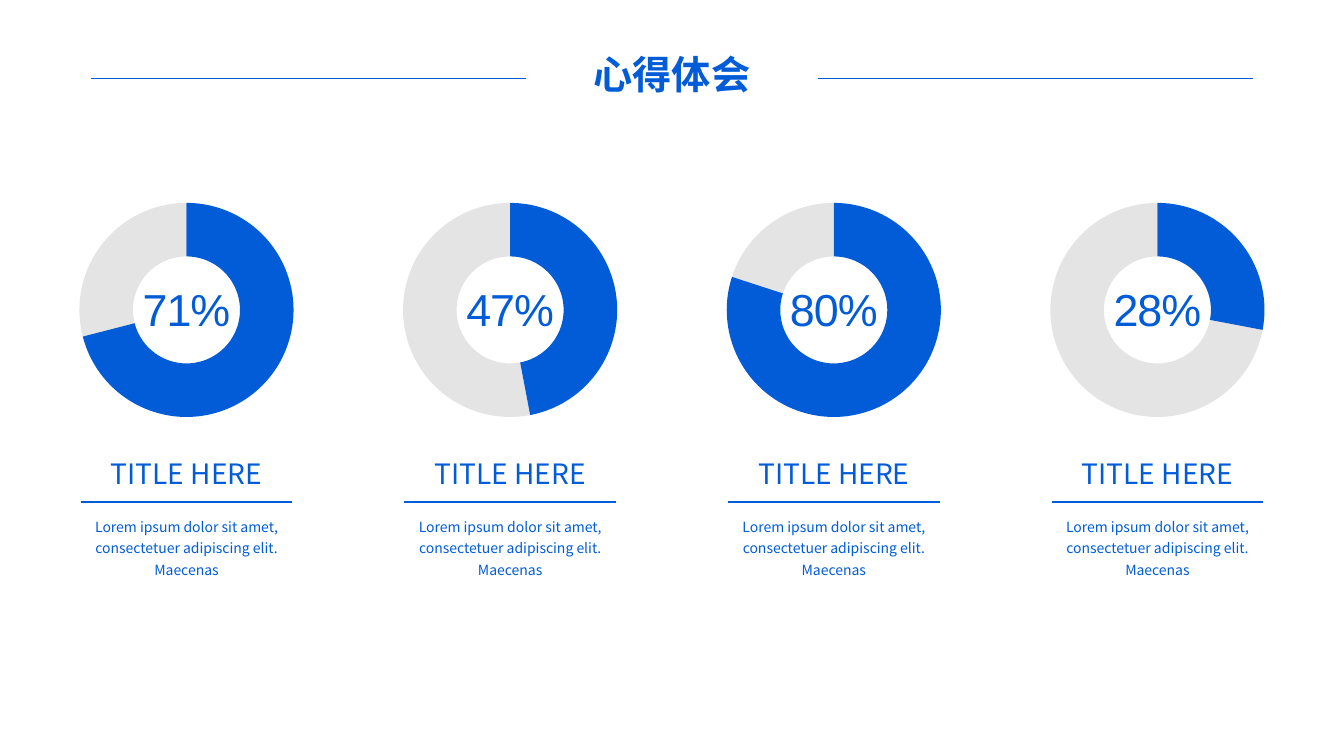
import pptx
import pptx.chart.data
import pptx.dml.color
import pptx.enum.chart
import pptx.enum.shapes
import pptx.enum.text
import pptx.oxml.ns
import pptx.util
from lxml import etree

COLORS = {"blue": "025CD7", "grey": "A6A6A6"}
HEADING_FONT = "Noto Sans CJK SC"
NUMBER_FONT = "Arial"
WIDTH, HEIGHT = 13.33, 7.5
FIRST_CENTER, COLUMN_STEP = 1.85, 3.21
PERCENTAGES = [71, 47, 80, 28]
CAPTION = "Lorem ipsum dolor sit amet, consectetuer adipiscing elit. Maecenas"

inches = pptx.util.Inches
qn = pptx.oxml.ns.qn


def rgb(name):
    return pptx.dml.color.RGBColor.from_string(COLORS[name])


def add_text(page, text, center, top, width, height, size, font=HEADING_FONT,
             bold=False, line_spacing=None, letter_spacing=None, wrap=True, middle=False):
    """Add centred blue text in a box placed by its horizontal centre."""
    box = page.shapes.add_textbox(inches(center - width / 2), inches(top),
                                  inches(width), inches(height))
    frame = box.text_frame
    frame.word_wrap = wrap
    frame.auto_size = pptx.enum.text.MSO_AUTO_SIZE.SHAPE_TO_FIT_TEXT
    if middle:
        frame.vertical_anchor = pptx.enum.text.MSO_ANCHOR.MIDDLE
    para = frame.paragraphs[0]
    para.alignment = pptx.enum.text.PP_ALIGN.CENTER
    if line_spacing:
        para.line_spacing = line_spacing
    span = para.add_run()
    span.text = text
    span.font.size = pptx.util.Pt(size)
    span.font.name = font
    span.font.bold = bold
    span.font.color.rgb = rgb("blue")
    properties = span.font._element
    etree.SubElement(properties, qn("a:ea"), typeface=font)
    if letter_spacing is not None:
        properties.set("spc", str(round(letter_spacing * 100)))


def add_rule(page, left, right, y, weight):
    rule = page.shapes.add_connector(pptx.enum.shapes.MSO_CONNECTOR.STRAIGHT,
                                     inches(left), inches(y), inches(right), inches(y))
    rule.line.color.rgb = rgb("blue")
    rule.line.width = pptx.util.Pt(weight)
    etree.SubElement(rule._element.spPr, qn("a:effectLst"))


def add_doughnut(page, percentage, center):
    data = pptx.chart.data.CategoryChartData()
    data.categories = ["1", "2"]
    data.add_series("Series 1", [percentage, 100 - percentage])
    width, height = 3.56, 2.4
    chart = page.shapes.add_chart(
        pptx.enum.chart.XL_CHART_TYPE.DOUGHNUT, inches(center - width / 2),
        inches(HEIGHT / 4), inches(width), inches(height), data).chart
    chart.has_legend = False
    chart.has_title = False
    chart.font.name = NUMBER_FONT
    chart.font.size = pptx.util.Pt(18)
    plot = chart.plots[0]
    plot.vary_by_categories = True
    plot._element.find(qn("c:holeSize")).set("val", "80")
    for index, color in enumerate(("blue", "grey")):
        piece = plot.series[0].points[index].format
        piece.fill.solid()
        piece.fill.fore_color.rgb = rgb(color)
        piece.line.fill.background()
    # The remainder is a 30 % tint of grey
    remainder = plot.series[0].points[1].format.fill
    grey = remainder._xPr.find(qn("a:solidFill")).find(qn("a:srgbClr"))
    etree.SubElement(grey, qn("a:alpha"), val="30000")


def add_header(page):
    middle, inner, outer = WIDTH / 2, 1.45, 5.76
    add_rule(page, middle - outer, middle - inner, 0.78, 0.5)
    add_rule(page, middle + inner, middle + outer, 0.78, 0.5)
    add_text(page, "心得体会", middle, 0.45, 2.86, 0.57, 28, bold=True)


def add_column(page, percentage, center):
    add_doughnut(page, percentage, center)
    add_text(page, "TITLE HERE", center, 4.48, 2.3, 0.44, 20)
    add_text(page, CAPTION, center, 5.04, 2.3, 0.74, 10, line_spacing=1.3)
    add_rule(page, center - 1.05, center + 1.05, 4.98, 1)
    add_text(page, f"{percentage}%", center, 2.74, 1.07, 0.64, 32, font=NUMBER_FONT,
             letter_spacing=-0.7, wrap=False, middle=True)


def main():
    deck = pptx.Presentation()
    deck.slide_width, deck.slide_height = inches(WIDTH), inches(HEIGHT)
    page = deck.slides.add_slide(deck.slide_layouts[6])
    add_header(page)
    for column, percentage in enumerate(PERCENTAGES):
        add_column(page, percentage, FIRST_CENTER + column * COLUMN_STEP)
    deck.save("out.pptx")


if __name__ == "__main__":
    main()
